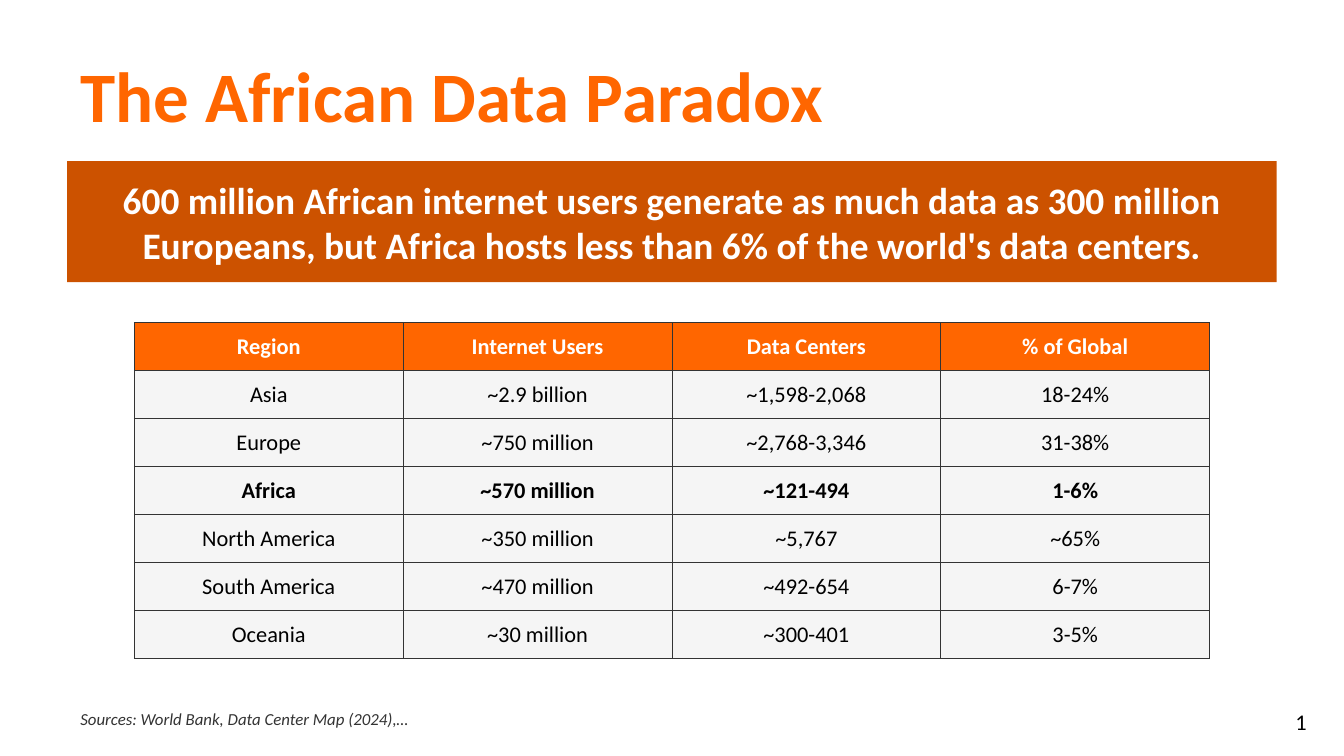
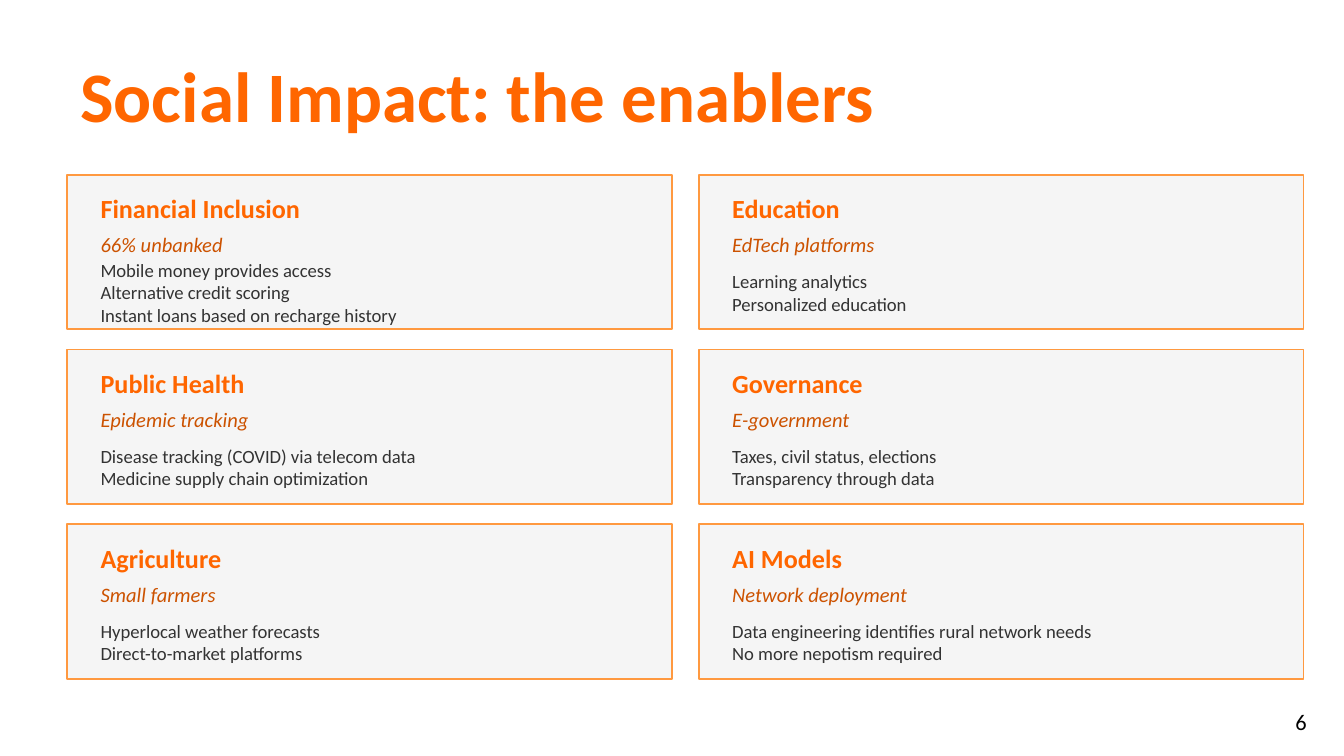
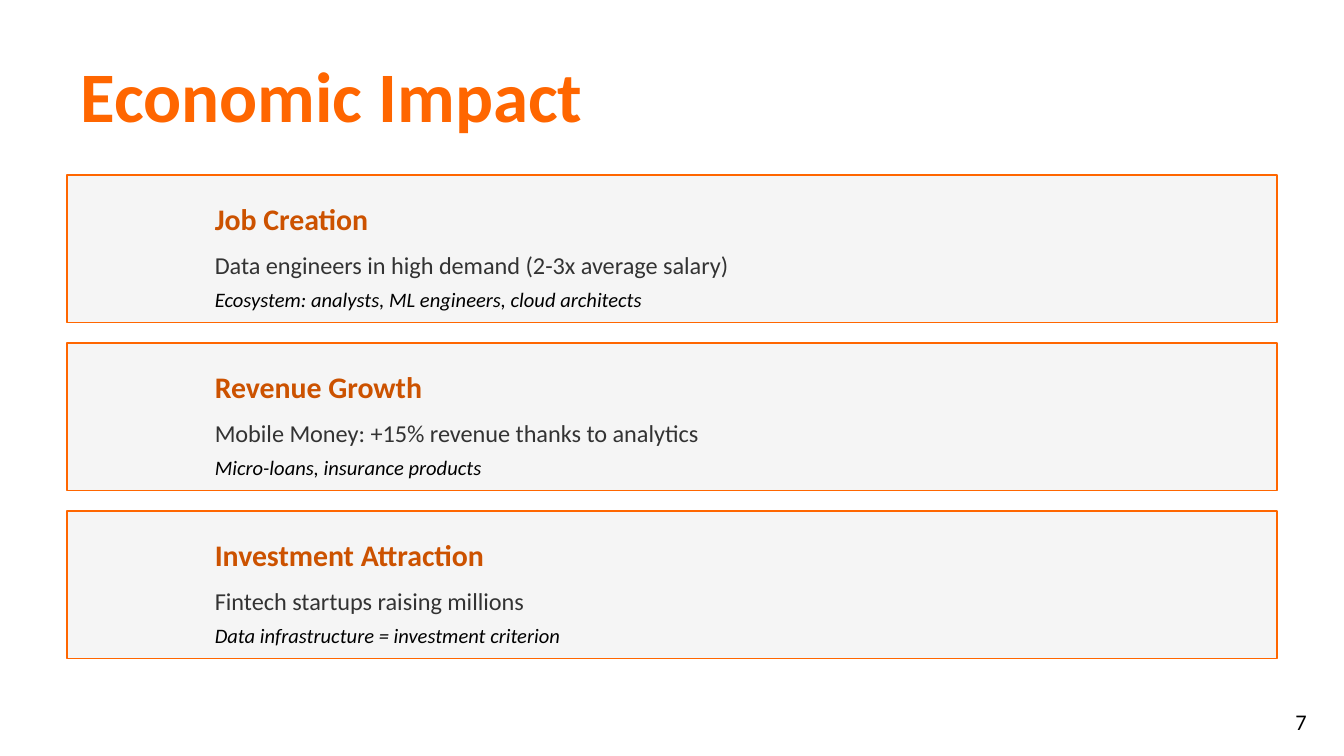
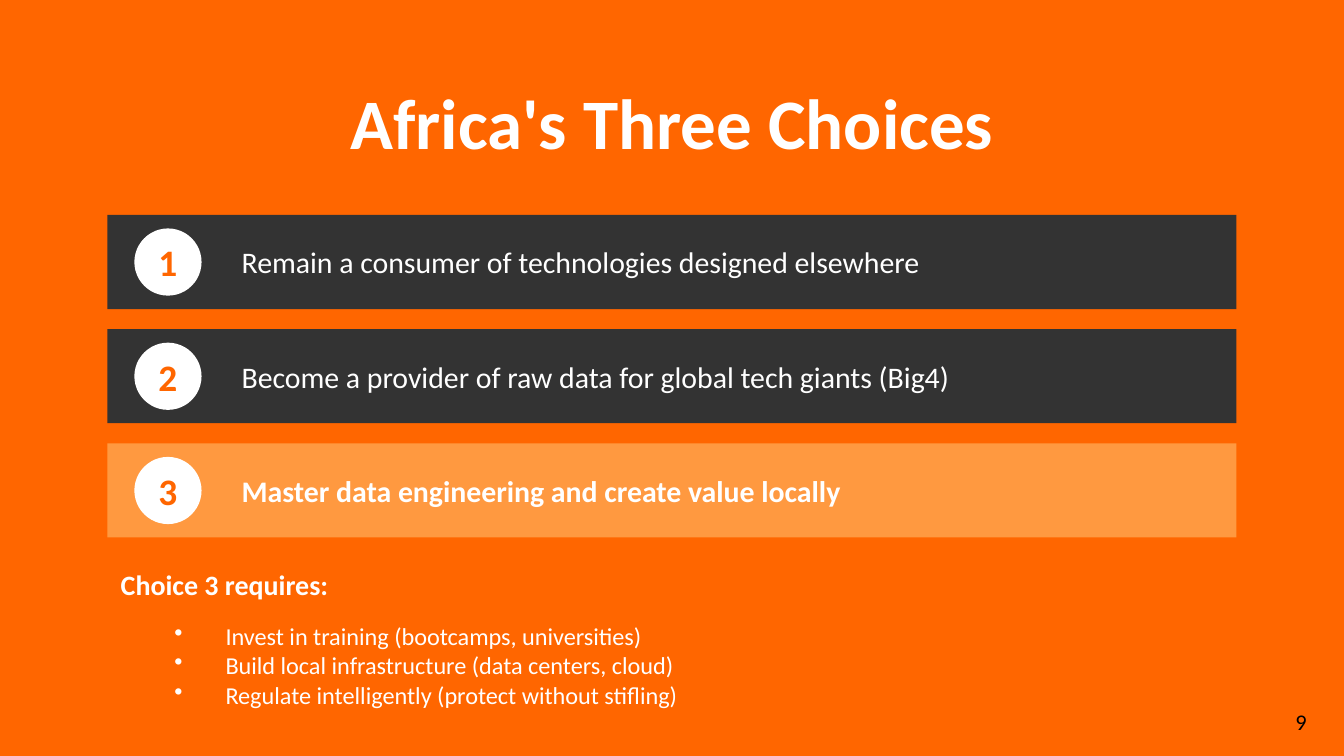
import pptx
import pptx.dml.color
import pptx.enum.shapes
import pptx.enum.text
import pptx.oxml
import pptx.oxml.ns
import pptx.util

PX_PER_INCH = 100
FONT = "Calibri"
ORANGE = "FF6600"
DARK_ORANGE = "CC5200"
LIGHT_ORANGE = "FF9940"
CHARCOAL = "333333"
PALE = "F5F5F5"
WHITE = "FFFFFF"
BLACK = "000000"

SHAPE = pptx.enum.shapes.MSO_SHAPE
ALIGN = pptx.enum.text.PP_ALIGN
ANCHOR = pptx.enum.text.MSO_ANCHOR
AUTO_SIZE = pptx.enum.text.MSO_AUTO_SIZE

REGIONS = [
    ("Region", "Internet Users", "Data Centers", "% of Global"),
    ("Asia", "~2.9 billion", "~1,598-2,068", "18-24%"),
    ("Europe", "~750 million", "~2,768-3,346", "31-38%"),
    ("Africa", "~570 million", "~121-494", "1-6%"),
    ("North America", "~350 million", "~5,767", "~65%"),
    ("South America", "~470 million", "~492-654", "6-7%"),
    ("Oceania", "~30 million", "~300-401", "3-5%"),
]

ENABLERS = [
    ("Financial Inclusion", "66% unbanked",
     ["Mobile money provides access", "Alternative credit scoring",
      "Instant loans based on recharge history"]),
    ("Public Health", "Epidemic tracking",
     ["Disease tracking (COVID) via telecom data",
      "Medicine supply chain optimization"]),
    ("Agriculture", "Small farmers",
     ["Hyperlocal weather forecasts", "Direct-to-market platforms"]),
    ("Education", "EdTech platforms",
     ["Learning analytics", "Personalized education"]),
    ("Governance", "E-government",
     ["Taxes, civil status, elections", "Transparency through data"]),
    ("AI Models", "Network deployment",
     ["Data engineering identifies rural network needs",
      "No more nepotism required"]),
]

IMPACTS = [
    ("Job Creation", "Data engineers in high demand (2-3x average salary)",
     "Ecosystem: analysts, ML engineers, cloud architects"),
    ("Revenue Growth", "Mobile Money: +15% revenue thanks to analytics",
     "Micro-loans, insurance products"),
    ("Investment Attraction", "Fintech startups raising millions",
     "Data infrastructure = investment criterion"),
]

CHOICES = [
    "Remain a consumer of technologies designed elsewhere",
    "Become a provider of raw data for global tech giants (Big4)",
    "Master data engineering and create value locally",
]

REQUIREMENTS = [
    "Invest in training (bootcamps, universities)",
    "Build local infrastructure (data centers, cloud)",
    "Regulate intelligently (protect without stifling)",
]


def px(n):
    return pptx.util.Emu(n * 914400 // PX_PER_INCH)


def rgb(color):
    return pptx.dml.color.RGBColor.from_string(color)


def add_bullet(p, indent):
    pPr = p._p.get_or_add_pPr()
    pPr.set("marL", str(px(indent)))
    pPr.set("indent", str(-px(indent)))
    bullet = pptx.oxml.parse_xml(
        f'<a:buChar {pptx.oxml.ns.nsdecls("a")} char="•"/>')
    pPr.append(bullet)


def write(tf, content, size, color, bold=False, italic=False,
          align=ALIGN.LEFT, bullet_indent=0):
    lines = [content] if isinstance(content, str) else content
    for i, line in enumerate(lines):
        p = tf.paragraphs[0] if i == 0 else tf.add_paragraph()
        p.alignment = align
        if bullet_indent:
            add_bullet(p, bullet_indent)
        r = p.add_run()
        r.text = line
        r.font.name = FONT
        r.font.size = pptx.util.Pt(size)
        r.font.bold = bold
        r.font.italic = italic
        r.font.color.rgb = rgb(color)


def add_text(s, x, y, w, h, content, wrap=True, anchor=ANCHOR.MIDDLE, **fmt):
    tf = s.shapes.add_textbox(px(x), px(y), px(w), px(h)).text_frame
    tf.word_wrap = wrap
    tf.vertical_anchor = anchor
    write(tf, content, **fmt)
    return tf


def add_box(s, x, y, w, h, fill, line=None, shape=SHAPE.RECTANGLE):
    sp = s.shapes.add_shape(shape, px(x), px(y), px(w), px(h))
    sp.shadow.inherit = False
    sp.fill.solid()
    sp.fill.fore_color.rgb = rgb(fill)
    if line:
        sp.line.color.rgb = rgb(line)
        sp.line.width = pptx.util.Pt(1)
    else:
        sp.line.fill.background()


def add_slide(prs, title, number, background=WHITE, title_color=ORANGE,
              title_y=40, align=ALIGN.LEFT):
    s = prs.slides.add_slide(prs.slide_layouts[6])
    s.background.fill.solid()
    s.background.fill.fore_color.rgb = rgb(background)
    add_text(s, 50, title_y, 900, 60, title, size=38, color=title_color,
             bold=True, align=align)
    tf = add_text(s, 954, 522, 29, 30, str(number), wrap=False,
                  anchor=ANCHOR.TOP, size=12, color=BLACK)
    tf.auto_size = AUTO_SIZE.SHAPE_TO_FIT_TEXT
    return s


def set_borders(cell, color, width):
    tcPr = cell._tc.get_or_add_tcPr()
    for side in ("lnL", "lnR", "lnT", "lnB"):
        tcPr.append(pptx.oxml.parse_xml(
            f'<a:{side} {pptx.oxml.ns.nsdecls("a")} w="{pptx.util.Pt(width)}">'
            f'<a:solidFill><a:srgbClr val="{color}"/></a:solidFill></a:{side}>'))


def add_region_table(s, x, y, w, h, rows, highlight):
    table = s.shapes.add_table(len(rows), len(rows[0]),
                               px(x), px(y), px(w), px(h)).table
    table.horz_banding = False
    for i, row in enumerate(rows):
        header = i == 0
        for j, value in enumerate(row):
            cell = table.cell(i, j)
            set_borders(cell, CHARCOAL, 0.5)
            cell.fill.solid()
            cell.fill.fore_color.rgb = rgb(ORANGE if header else PALE)
            cell.vertical_anchor = ANCHOR.MIDDLE
            write(cell.text_frame, value, size=12,
                  color=WHITE if header else BLACK,
                  bold=header or row[0] == highlight, align=ALIGN.CENTER)


def add_enabler(s, x, y, heading, theme, points):
    add_box(s, x, y, 450, 115, PALE, line=LIGHT_ORANGE)
    add_text(s, x + 15, y + 10, 420, 30, heading, size=14, color=ORANGE, bold=True)
    add_text(s, x + 15, y + 42, 420, 20, theme, size=11, color=DARK_ORANGE,
             italic=True)
    add_text(s, x + 15, y + 65, 420, 45, points, size=10, color=CHARCOAL)


def add_impact(s, y, heading, fact, detail):
    add_box(s, 50, y, 900, 110, PALE, line=ORANGE)
    add_text(s, 150, y + 15, 780, 35, heading, size=16, color=DARK_ORANGE,
             bold=True)
    add_text(s, 150, y + 52, 780, 30, fact, size=13, color=CHARCOAL)
    add_text(s, 150, y + 80, 780, 25, detail, size=11, color=BLACK, italic=True)


def add_choice(s, y, number, choice, preferred):
    add_box(s, 80, y, 840, 70, LIGHT_ORANGE if preferred else CHARCOAL)
    add_box(s, 100, y + 10, 50, 50, WHITE, shape=SHAPE.OVAL)
    add_text(s, 100, y + 10, 50, 50, str(number), size=20, color=ORANGE,
             bold=True, align=ALIGN.CENTER)
    add_text(s, 170, y + 15, 730, 40, choice, size=16, color=WHITE,
             bold=preferred)


def build_paradox(prs):
    s = add_slide(prs, "The African Data Paradox", 1)
    add_box(s, 50, 120, 900, 90, DARK_ORANGE)
    tf = add_text(s, 80, 155, 840, 50,
                  "600 million African internet users generate as much data as "
                  "300 million Europeans, but Africa hosts less than 6% of the "
                  "world's data centers.",
                  size=20, color=WHITE, bold=True, align=ALIGN.CENTER)
    tf.margin_bottom = px(35)
    add_region_table(s, 100, 240, 800, 250, REGIONS, highlight="Africa")
    add_text(s, 50, 520, 900, 30, "Sources: World Bank, Data Center Map (2024),…",
             size=9, color=CHARCOAL, italic=True)


def build_enablers(prs):
    s = add_slide(prs, "Social Impact: the enablers", 6)
    for i, enabler in enumerate(ENABLERS):
        column, row = divmod(i, 3)
        add_enabler(s, 50 + 470 * column, 130 + 130 * row, *enabler)


def build_impacts(prs):
    s = add_slide(prs, "Economic Impact", 7)
    for i, impact in enumerate(IMPACTS):
        add_impact(s, 130 + 125 * i, *impact)


def build_choices(prs):
    s = add_slide(prs, "Africa's Three Choices", 9, background=ORANGE,
                  title_color=WHITE, title_y=60, align=ALIGN.CENTER)
    for i, choice in enumerate(CHOICES):
        add_choice(s, 160 + 85 * i, i + 1, choice, preferred=i == 2)
    add_text(s, 80, 420, 840, 30, "Choice 3 requires:", size=15, color=WHITE,
             bold=True)
    add_text(s, 120, 460, 760, 70, REQUIREMENTS, size=13, color=WHITE,
             bullet_indent=38)


def main():
    prs = pptx.Presentation()
    prs.slide_width = px(1000)
    prs.slide_height = prs.slide_width * 9 // 16
    build_paradox(prs)
    build_enablers(prs)
    build_impacts(prs)
    build_choices(prs)
    prs.save("out.pptx")


if __name__ == "__main__":
    main()
